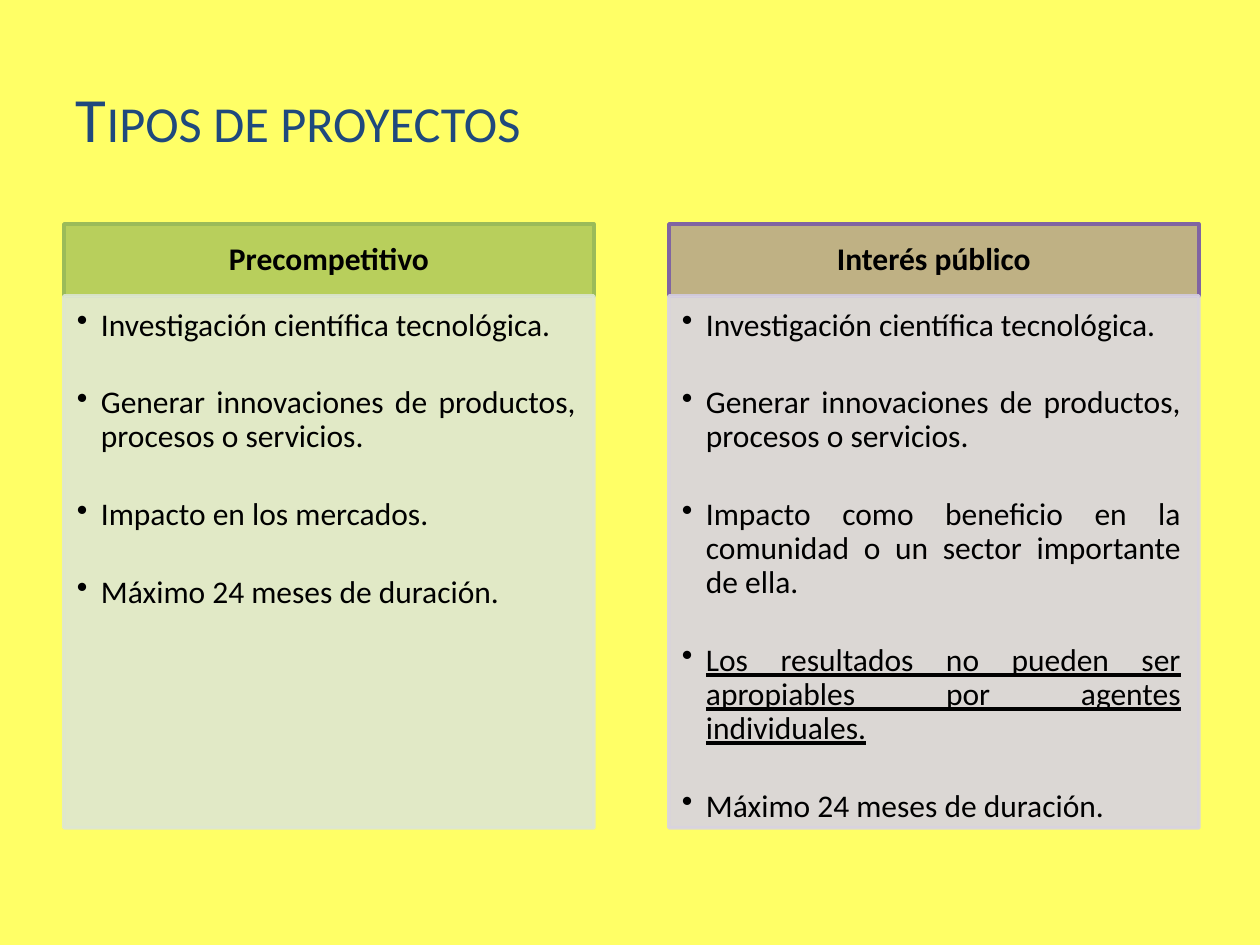
from lxml import etree
from pptx import Presentation
from pptx import util as u
from pptx.dml.color import RGBColor
from pptx.enum import shapes, text
from pptx.oxml.ns import qn

SCALE = 914400 / 126


def px(n):
    return u.Emu(round(n * SCALE))


def rgb(code):
    return RGBColor.from_string(code)


def paint(fill, code, alpha=100):
    """Solid fill with an opacity in percent."""
    fill.solid()
    fill.fore_color.rgb = rgb(code)
    if alpha < 100:
        node = fill._xPr.find(qn("a:solidFill"))[0]
        etree.SubElement(node, qn("a:alpha"), val=str(alpha * 1000))


class Deck:
    font = "Calibri"
    ink = "000000"

    def __init__(self, wide, high, back):
        self.prs = Presentation()
        self.prs.slide_width, self.prs.slide_height = px(wide), px(high)
        self.slide = self.prs.slides.add_slide(self.prs.slide_layouts[6])
        paint(self.slide.background.fill, back)

    def frame(self, shape, pads, anchor):
        tf = shape.text_frame
        tf.word_wrap = True
        tf.vertical_anchor = anchor
        sides = ("margin_left", "margin_top", "margin_right", "margin_bottom")
        for side, pad in zip(sides, pads):
            setattr(tf, side, px(pad))
        return tf

    def label(self, par, words, color=ink, size=18, **form):
        run = par.add_run()
        run.text = words
        look = {"name": self.font, "size": u.Pt(size), **form}
        for key, val in look.items():
            setattr(run.font, key, val)
        run.font.color.rgb = rgb(color)
        return run

    def title(self, words, box, color):
        shape = self.slide.shapes.add_textbox(*map(px, box))
        tf = self.frame(shape, (13, 6, 13, 6), text.MSO_ANCHOR.MIDDLE)
        run = self.label(tf.paragraphs[0], words, color, 36)
        run._r.get_or_add_rPr().set("cap", "small")

    def block(self, box, color, fade, edge):
        shape = self.slide.shapes.add_shape(
            shapes.MSO_SHAPE.RECTANGLE, *map(px, box))
        shape.shadow.inherit = False
        paint(shape.fill, color, fade)
        paint(shape.line.fill, color, edge)
        shape.line.width = u.Pt(2)
        return shape

    def head(self, words, box, color, fade):
        shape = self.block(box, color, fade, 100)
        tf = self.frame(shape, (18, 10, 18, 10), text.MSO_ANCHOR.MIDDLE)
        par = tf.paragraphs[0]
        par.alignment = text.PP_ALIGN.CENTER
        par.line_spacing = 0.9
        self.label(par, words, bold=True)

    def points(self, items, box, color, under):
        """Bulleted panel; the item equal to under is underlined."""
        shape = self.block(box, color, 90, 90)
        tf = self.frame(shape, (13, 13, 18, 20), text.MSO_ANCHOR.TOP)
        for i, item in enumerate(items):
            par = tf.add_paragraph() if i else tf.paragraphs[0]
            par.alignment = text.PP_ALIGN.JUSTIFY
            par.line_spacing = 0.9
            par.space_before = u.Pt(25 if i else 0)
            props = par._p.get_or_add_pPr()
            props.set("marL", str(px(24)))
            props.set("indent", str(-px(24)))
            etree.SubElement(props, qn("a:buChar"), char="•")
            self.label(par, item, underline=item == under)


FIRST = "Investigación científica tecnológica."
GOAL = "Generar innovaciones de productos, procesos o servicios."
TERM = "Máximo 24 meses de duración."
OPEN = "Los resultados no pueden ser apropiables por agentes individuales."
KINDS = [
    ("Precompetitivo", "9BBB59", 70, "DEE7D1",
     [FIRST, GOAL, "Impacto en los mercados.", TERM]),
    ("Interés público", "8064A2", 50, "D8D3E0",
     [FIRST, GOAL,
      "Impacto como beneficio en la comunidad o un sector importante de ella.",
      OPEN, TERM]),
]
LEFT, STEP, WIDE = 64, 605, 530
TOP, HEAD, BODY = 224, 72, 532


def main():
    deck = Deck(1260, 945, "FFFF66")
    deck.title("Tipos de proyectos", (63, 38, 984, 158), "1F497D")
    for i, (name, color, fade, pale, items) in enumerate(KINDS):
        x = LEFT + i * STEP
        deck.head(name, (x, TOP, WIDE, HEAD), color, fade)
        deck.points(items, (x, TOP + HEAD, WIDE, BODY), pale, OPEN)
    deck.prs.save("out.pptx")


if __name__ == "__main__":
    main()
